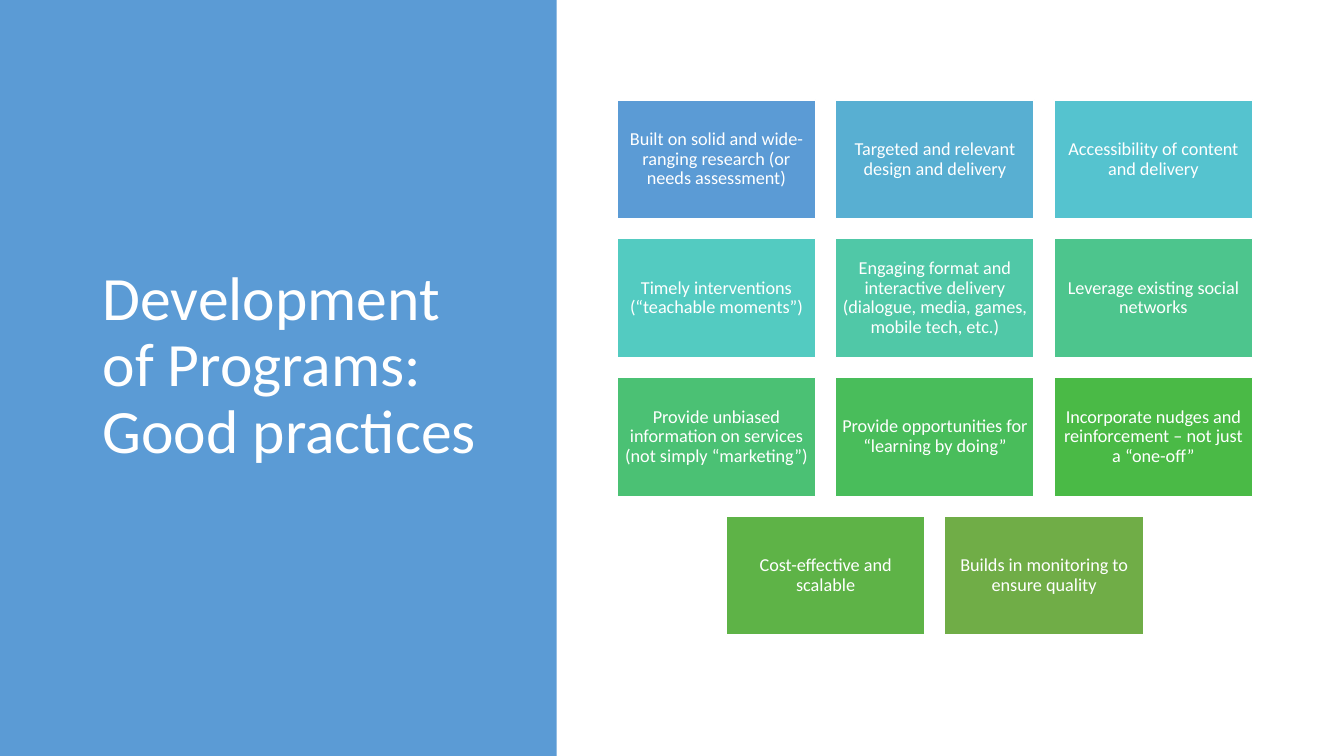
"""Build a slide of good practices for programme development."""
import pptx
import pptx.dml.color
import pptx.enum.shapes
import pptx.enum.text
import pptx.util

RGBColor = pptx.dml.color.RGBColor
Inches = pptx.util.Inches
ALIGN = pptx.enum.text.PP_ALIGN

WHITE = RGBColor(0xFF, 0xFF, 0xFF)
BLUE = RGBColor(0x5B, 0x9B, 0xD5)
SKY = RGBColor(0x58, 0xAF, 0xD2)
CYAN = RGBColor(0x55, 0xC3, 0xCF)
TURQUOISE = RGBColor(0x53, 0xCB, 0xC1)
AQUA = RGBColor(0x50, 0xC8, 0xA7)
MINT = RGBColor(0x4D, 0xC5, 0x8D)
JADE = RGBColor(0x4B, 0xC1, 0x74)
EMERALD = RGBColor(0x49, 0xBD, 0x5B)
GREEN = RGBColor(0x4A, 0xBA, 0x46)
LEAF = RGBColor(0x5E, 0xB3, 0x47)
OLIVE = RGBColor(0x70, 0xAD, 0x47)

SLIDE_WIDTH, SLIDE_HEIGHT = 13.33, 7.5
PANEL_WIDTH = 5.52
GRID_LEFT, GRID_TOP = 6.12, 0.99
CARD_WIDTH, CARD_HEIGHT = 1.97, 1.18
GAP = 0.197
COLUMNS = 3

PRACTICES = [
    ("Built on solid and wide-ranging research (or needs assessment)", BLUE),
    ("Targeted and relevant design and delivery", SKY),
    ("Accessibility of content and delivery", CYAN),
    ("Timely interventions (“teachable moments”)", TURQUOISE),
    ("Engaging format and interactive delivery (dialogue, media, games, mobile tech, etc.)", AQUA),
    ("Leverage existing social networks", MINT),
    ("Provide unbiased information on services (not simply “marketing”)", JADE),
    ("Provide opportunities for “learning by doing”", EMERALD),
    ("Incorporate nudges and reinforcement – not just a “one-off”", GREEN),
    ("Cost-effective and scalable", LEAF),
    ("Builds in monitoring to ensure quality", OLIVE),
]


def add_rectangle(page, left, top, width, height, color):
    """Add a plain filled rectangle without outline."""
    box = page.shapes.add_shape(
        pptx.enum.shapes.MSO_SHAPE.RECTANGLE,
        Inches(left), Inches(top), Inches(width), Inches(height))
    box.shadow.inherit = False
    box.fill.solid()
    box.fill.fore_color.rgb = color
    box.line.fill.background()
    return box


def write(box, text, size, alignment, side_inset, end_inset):
    """Write white, vertically centred text into a box."""
    frame = box.text_frame
    frame.word_wrap = True
    frame.vertical_anchor = pptx.enum.text.MSO_ANCHOR.MIDDLE
    frame.margin_left = frame.margin_right = Inches(side_inset)
    frame.margin_top = frame.margin_bottom = Inches(end_inset)
    frame.text = text
    para = frame.paragraphs[0]
    para.alignment = alignment
    para.line_spacing = 0.9
    span = para.runs[0]
    span.font.name = "Calibri"
    span.font.size = pptx.util.Pt(size)
    span.font.color.rgb = WHITE


def add_title(page, text):
    """Add the slide title over the side panel."""
    box = page.shapes.add_textbox(Inches(0.92), Inches(0.68), Inches(4.12), Inches(5.92))
    write(box, text, 44, ALIGN.LEFT, 0.1, 0.05)


def add_card(page, column, row, text, color):
    """Add one practice card at a grid position."""
    left = GRID_LEFT + column * (CARD_WIDTH + GAP)
    top = GRID_TOP + row * (CARD_HEIGHT + GAP)
    card = add_rectangle(page, left, top, CARD_WIDTH, CARD_HEIGHT, color)
    card.line.color.rgb = WHITE
    card.line.width = pptx.util.Pt(1)
    write(card, text, 13, ALIGN.CENTER, 0.05, 0.05)


def add_card_grid(page, practices):
    """Lay the cards out in rows, centring a short last row."""
    for row, start in enumerate(range(0, len(practices), COLUMNS)):
        cards = practices[start:start + COLUMNS]
        indent = (COLUMNS - len(cards)) / 2
        for column, (text, color) in enumerate(cards):
            add_card(page, column + indent, row, text, color)


def main():
    """Build and save the deck."""
    deck = pptx.Presentation()
    deck.slide_width = Inches(SLIDE_WIDTH)
    deck.slide_height = Inches(SLIDE_HEIGHT)
    page = deck.slides.add_slide(deck.slide_layouts[6])
    add_rectangle(page, 0, 0, PANEL_WIDTH, SLIDE_HEIGHT, BLUE)
    add_title(page, "Development of Programs: Good practices")
    add_card_grid(page, PRACTICES)
    deck.save("out.pptx")


if __name__ == "__main__":
    main()
